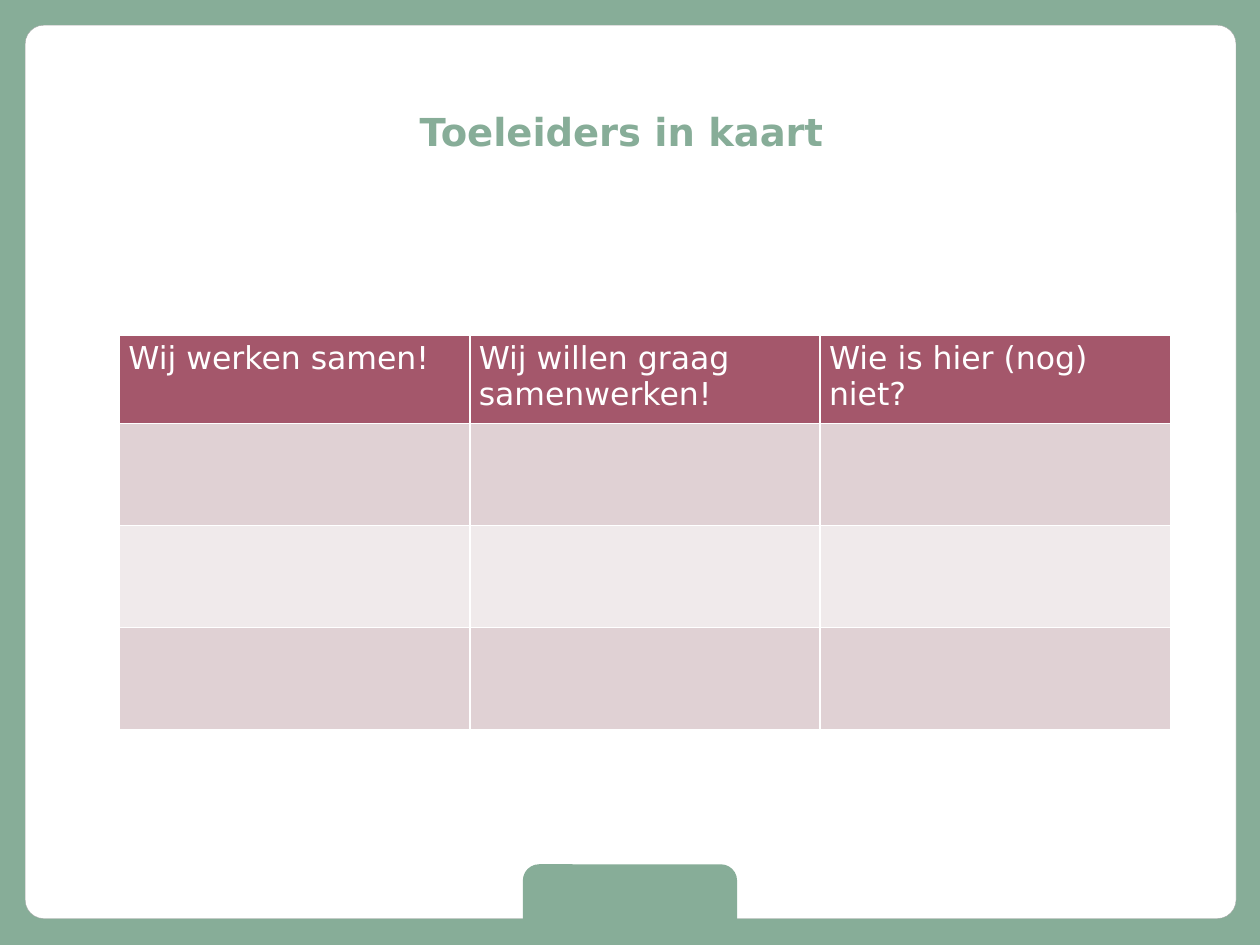
from lxml.etree import SubElement
from pptx import Presentation
from pptx.dml.color import RGBColor
from pptx.enum.shapes import MSO_SHAPE
from pptx.enum.text import MSO_ANCHOR, PP_ALIGN
from pptx.oxml.ns import qn
from pptx.util import Inches, Pt

FONT = "DejaVu Sans"
COLORS = {
    "green": "87AD98",
    "white": "FFFFFF",
    "outline": "A4A4A4",
    "header": "A4576B",
    "dark_band": "E0D1D4",
    "light_band": "F0EAEB",
}
HEADINGS = ["Wij werken samen!", "Wij willen graag samenwerken!", "Wie is hier (nog) niet?"]
ROW_FILLS = ["header", "dark_band", "light_band", "dark_band"]
ROW_HEIGHTS = [0.7, 0.81, 0.81, 0.81]


def color(name):
    return RGBColor.from_string(COLORS[name])


def fill_solid(target, name):
    target.fill.solid()
    target.fill.fore_color.rgb = color(name)


def format_text(paragraph, size, name, bold=False):
    for run in paragraph.runs:
        run.font.name = FONT
        run.font.size = Pt(size)
        run.font.bold = bold
        run.font.color.rgb = color(name)


def add_round_panel(slide, left, top, width, height, radius, fill, outline=None):
    shape = slide.shapes.add_shape(
        MSO_SHAPE.ROUNDED_RECTANGLE, Inches(left), Inches(top), Inches(width), Inches(height)
    )
    shape.adjustments[0] = radius
    shape.shadow.inherit = False
    fill_solid(shape, fill)
    if outline:
        shape.line.color.rgb = color(outline)
        shape.line.width = Pt(0.16)
    else:
        shape.line.fill.background()


def set_borders(cell, name, width):
    properties = cell._tc.get_or_add_tcPr()
    for index, side in enumerate(("a:lnL", "a:lnR", "a:lnT", "a:lnB")):
        line = properties.makeelement(qn(side), {"w": str(Pt(width))})
        fill = SubElement(line, qn("a:solidFill"))
        SubElement(fill, qn("a:srgbClr"), val=COLORS[name])
        properties.insert(index, line)


def add_title(slide, text):
    title = slide.shapes.title
    title.left, title.top = Inches(0.94), Inches(0.36)
    title.width, title.height = Inches(8.09), Inches(1.36)
    title.text_frame.text = text
    title.text_frame.vertical_anchor = MSO_ANCHOR.MIDDLE
    paragraph = title.text_frame.paragraphs[0]
    paragraph.alignment = PP_ALIGN.CENTER
    format_text(paragraph, 22, "green", bold=True)


def add_partner_table(slide):
    table = slide.shapes.add_table(
        len(ROW_FILLS), len(HEADINGS), Inches(0.95), Inches(2.66), Inches(8.34), Inches(sum(ROW_HEIGHTS))
    ).table
    for row, height, fill in zip(table.rows, ROW_HEIGHTS, ROW_FILLS):
        row.height = Inches(height)
        for cell in row.cells:
            fill_solid(cell, fill)
            set_borders(cell, "white", 1)
            cell.margin_left = cell.margin_right = Inches(0.07)
            cell.margin_top = cell.margin_bottom = Inches(0.04)
    for cell, heading in zip(table.rows[0].cells, HEADINGS):
        cell.text_frame.text = heading
        format_text(cell.text_frame.paragraphs[0], 18, "white")


def main():
    presentation = Presentation()
    presentation.slide_width = Inches(10)
    presentation.slide_height = Inches(7.5)
    slide = presentation.slides.add_slide(presentation.slide_layouts[5])
    fill_solid(slide.background, "green")
    add_round_panel(slide, 0.2, 0.2, 9.61, 7.09, 0.021, "white", "outline")
    add_round_panel(slide, 4.15, 6.86, 1.7, 0.56, 0.229, "green")
    add_partner_table(slide)
    add_title(slide, "Toeleiders in kaart ")
    title_element = slide.shapes.title._element
    title_element.getparent().append(title_element)
    presentation.save("out.pptx")


if __name__ == "__main__":
    main()
